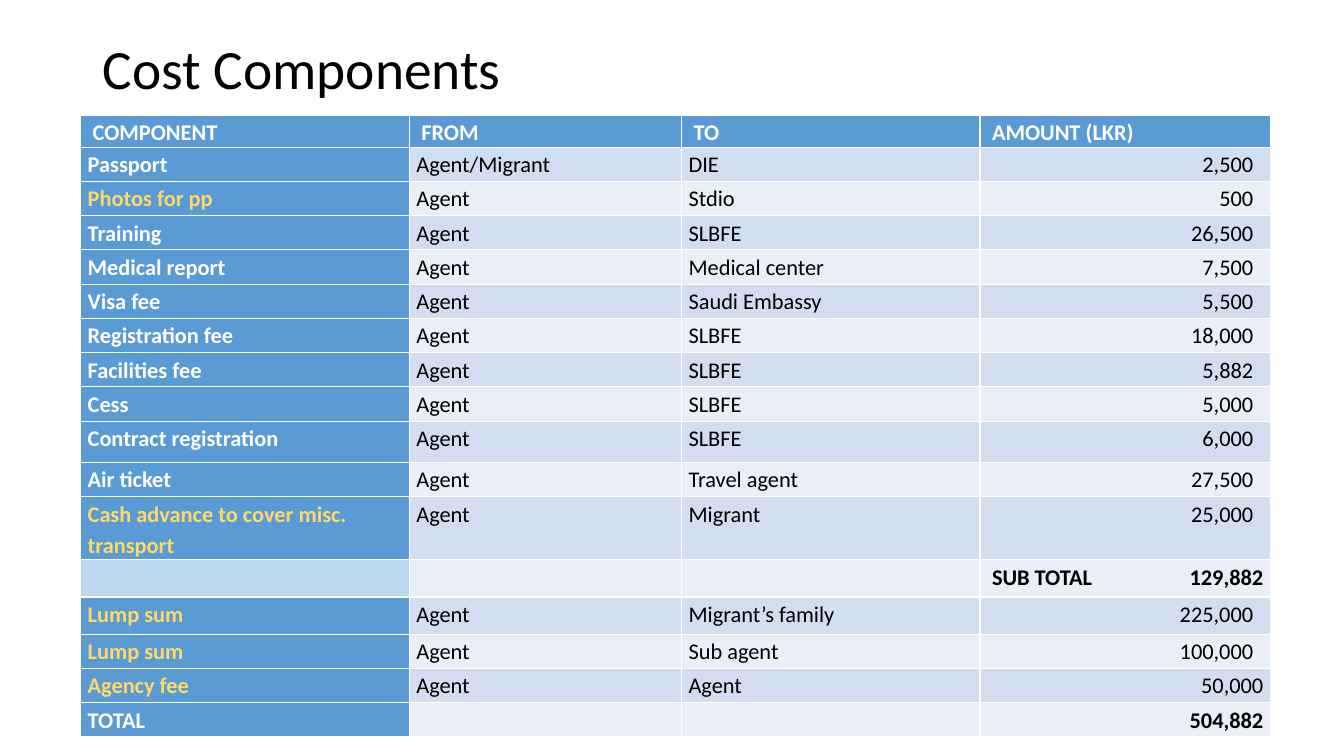
from lxml import etree
from pptx import Presentation
from pptx.dml.color import RGBColor
from pptx.enum import text as txt
from pptx.oxml import ns
from pptx.util import Inches, Pt

BLUE, PALE, DARK, LIGHT = "5B9BD5", "BDD7EE", "D2DEEF", "EAEFF7"
WHITE, BLACK, GOLD = "FFFFFF", "000000", "FFD966"
LEFT, RIGHT = txt.PP_ALIGN.LEFT, txt.PP_ALIGN.RIGHT

HEAD = ["COMPONENT", "FROM", "TO", "AMOUNT (LKR)"]
COSTS = [
    ("Passport", "Agent/Migrant", "DIE", "2,500"),
    ("Photos for pp", "Agent", "Stdio", "500"),
    ("Training", "Agent", "SLBFE", "26,500"),
    ("Medical report", "Agent", "Medical center", "7,500"),
    ("Visa fee", "Agent", "Saudi Embassy", "5,500"),
    ("Registration fee", "Agent", "SLBFE", "18,000"),
    ("Facilities fee", "Agent", "SLBFE", "5,882"),
    ("Cess", "Agent", "SLBFE", "5,000"),
    ("Contract registration", "Agent", "SLBFE", "6,000"),
    ("Air ticket", "Agent", "Travel agent", "27,500"),
    ("Cash advance to cover misc. transport", "Agent", "Migrant", "25,000"),
    ("", "", "", "SUB TOTAL\t129,882"),
    ("Lump sum", "Agent", "Migrant’s family", "225,000"),
    ("Lump sum", "Agent", "Sub agent", "100,000"),
    ("Agency fee", "Agent", "Agent", "50,000"),
    ("TOTAL", "", "", "504,882"),
]
SUB, LAST = 12, len(COSTS)
GOLDEN = {2, 11, 13, 14, 15}
FLUSH = {SUB, LAST - 1, LAST}
WIDTHS = [3.26, 2.7, 2.96, 2.88]
TALL = {0: 0.32, 9: 0.41, 11: 0.62, 12: 0.37, 13: 0.37}
PAD, INDENT = 0.07, 0.12


def color(code):
    return RGBColor.from_string(code)


def write(frame, words, size=16, ink=BLACK, bold=False, align=LEFT, lead=1.15):
    para = frame.paragraphs[0]
    para.alignment = align
    para.line_spacing = lead
    run = para.add_run()
    run.text = words
    font = run.font
    font.name, font.size, font.bold = "Calibri", Pt(size), bold
    font.color.rgb = color(ink)
    return para


def set_tab(para, place):
    props = para._p.get_or_add_pPr()
    tabs = etree.SubElement(props, ns.qn("a:tabLst"))
    etree.SubElement(tabs, ns.qn("a:tab"), pos=str(Inches(place)), algn="r")


def add_title(slide, x, y, w, h):
    title = slide.shapes.title
    title.left, title.top, title.width, title.height = map(Inches, (x, y, w, h))
    title.text_frame.vertical_anchor = txt.MSO_ANCHOR.MIDDLE
    write(title.text_frame, "Cost Components", size=39.6, lead=0.9)


def fill_cell(cell, row, col, words):
    head, side, sum_col = row == 0, col == 0, col == 3
    blank = side and not words
    back = PALE if blank else BLUE if head or side else DARK if row % 2 else LIGHT
    cell.fill.solid()
    cell.fill.fore_color.rgb = color(back)
    tabbed = "\t" in words
    cell.margin_top = cell.margin_bottom = 0
    cell.margin_left = Inches(INDENT if head or tabbed else PAD)
    inset = sum_col and not head and row not in FLUSH
    cell.margin_right = Inches(PAD + 0.1 if inset else PAD)
    if not words:
        return
    ink = GOLD if side and row in GOLDEN else WHITE if head or side else BLACK
    bold = head or side or (sum_col and row in (SUB, LAST))
    align = RIGHT if sum_col and not head and not tabbed else LEFT
    para = write(cell.text_frame, words, ink=ink, bold=bold, align=align)
    if tabbed:
        set_tab(para, WIDTHS[col] - INDENT - PAD)


def add_costs(slide, x, y, w, h):
    rows = [HEAD] + COSTS
    box = map(Inches, (x, y, w, h))
    table = slide.shapes.add_table(len(rows), len(HEAD), *box).table
    for col, width in zip(table.columns, WIDTHS):
        col.width = Inches(width)
    for r, cells in enumerate(rows):
        table.rows[r].height = Inches(TALL.get(r, 0.34))
        for c, words in enumerate(cells):
            fill_cell(table.cell(r, c), r, c, words)


def main():
    deck = Presentation()
    deck.slide_width, deck.slide_height = Inches(13.33), Inches(7.5)
    slide = deck.slides.add_slide(deck.slide_layouts[5])
    add_title(slide, 0.92, 0.4, 11.5, 0.61)
    add_costs(slide, 0.8, 1.14, 11.8, 6.19)
    deck.save("out.pptx")


if __name__ == "__main__":
    main()
